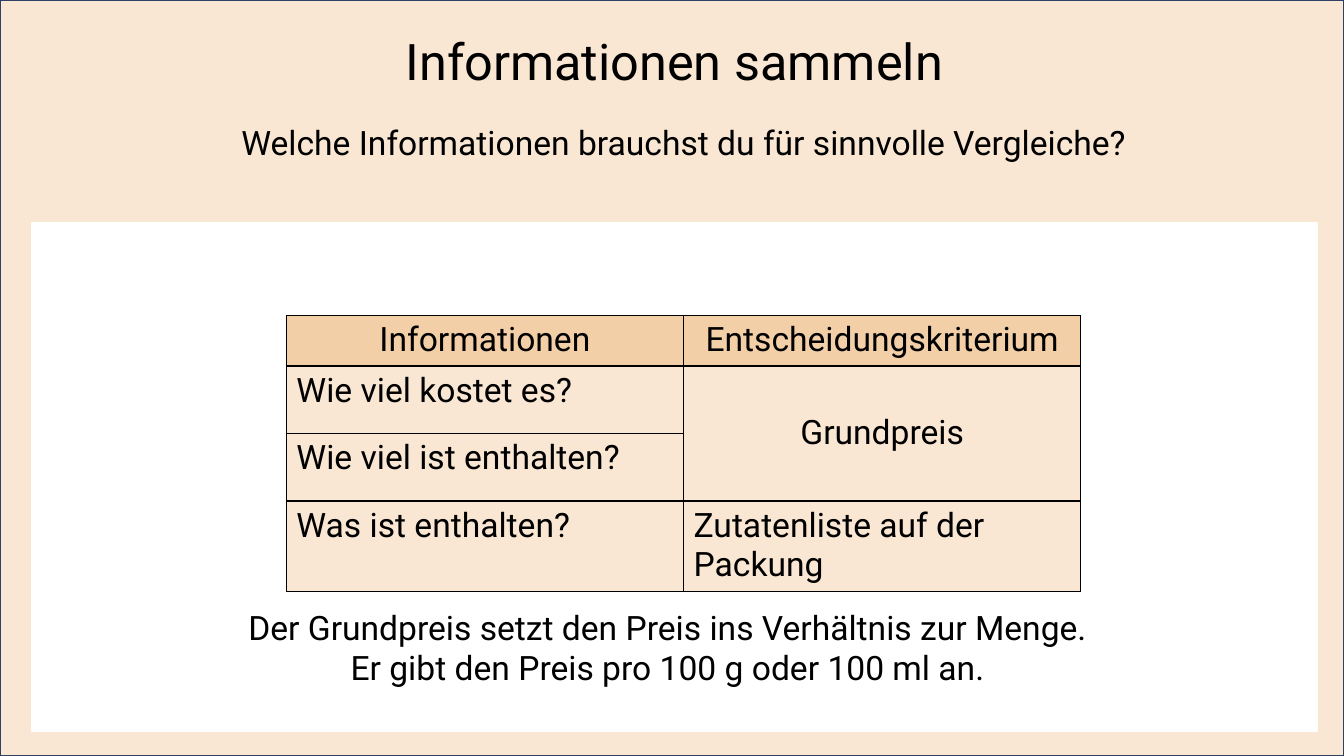
from lxml import etree
from pptx import Presentation
from pptx.dml.color import RGBColor
from pptx.enum.shapes import MSO_SHAPE as SHAPE
from pptx.enum.text import MSO_ANCHOR as ANCHOR, PP_ALIGN as ALIGN
from pptx.oxml.ns import qn
from pptx.util import Inches, Pt

COLORS = {
    "text": "000000",
    "cream": "F9E7D3",
    "header": "F2CFA7",
    "panel": "FFFFFF",
    "frame": "303F65",
}


class SlideBuilder:
    font = "Roboto"

    def __init__(self, slide):
        self.slide = slide

    def color(self, name):
        return RGBColor.from_string(COLORS[name])

    def style(self, p, size, align):
        p.alignment = align
        p.font.name = self.font
        p.font.size = Pt(size)
        p.font.color.rgb = self.color("text")

    def rect(self, x, y, w, h, fill, line):
        s = self.slide.shapes.add_shape(
            SHAPE.RECTANGLE, Inches(x), Inches(y), Inches(w), Inches(h))
        s.shadow.inherit = False
        s.fill.solid()
        s.fill.fore_color.rgb = self.color(fill)
        s.line.color.rgb = self.color(line)
        s.line.width = Pt(1.25)

    def text(self, x, y, w, h, lines, size=24):
        s = self.slide.shapes.add_textbox(Inches(x), Inches(y), Inches(w), Inches(h))
        tf = s.text_frame
        tf.word_wrap = True
        tf.text = "\n".join(lines)
        for p in tf.paragraphs:
            self.style(p, size, ALIGN.CENTER)

    def borders(self, cell):
        tcPr = cell._tc.get_or_add_tcPr()
        for i, side in enumerate(("lnL", "lnR", "lnT", "lnB")):
            ln = etree.Element(qn(f"a:{side}"), w=str(Pt(1)))
            fill = etree.SubElement(ln, qn("a:solidFill"))
            etree.SubElement(fill, qn("a:srgbClr"), val=COLORS["text"])
            tcPr.insert(i, ln)

    def table(self, x, y, col_w, row_heights, rows, merge):
        n_cols = len(rows[0])
        frame = self.slide.shapes.add_table(
            len(rows), n_cols, Inches(x), Inches(y),
            Inches(col_w * n_cols), Inches(sum(row_heights)))
        table = frame.table
        for col in table.columns:
            col.width = Inches(col_w)
        for row, height in zip(table.rows, row_heights):
            row.height = Inches(height)
        first, last = (table.cell(*pos) for pos in merge)
        first.merge(last)
        first.vertical_anchor = ANCHOR.MIDDLE
        for r, row in enumerate(rows):
            for c, content in enumerate(row):
                cell = table.cell(r, c)
                cell.fill.solid()
                cell.fill.fore_color.rgb = self.color("cream" if r else "header")
                self.borders(cell)
                cell.text = content
                p = cell.text_frame.paragraphs[0]
                centered = r == 0 or cell.is_merge_origin
                self.style(p, 24, ALIGN.CENTER if centered else ALIGN.LEFT)
                p.font.bold = False


def main():
    prs = Presentation()
    prs.slide_width, prs.slide_height = Inches(13.33), Inches(7.5)
    b = SlideBuilder(prs.slides.add_slide(prs.slide_layouts[6]))

    # Background and content panel
    b.rect(0, 0, 13.33, 7.5, "cream", "frame")
    b.rect(0.32, 2.21, 12.74, 5.04, "panel", "panel")

    # Title and question
    b.text(0.32, 0.25, 12.74, 0.71, ["Informationen sammeln"], size=36)
    b.text(0.32, 1.16, 12.92, 0.5,
           ["Welche Informationen brauchst du für sinnvolle Vergleiche?"])

    # Criteria table
    b.table(2.84, 3.13, 3.94, [0.5, 0.67, 0.67, 0.9], [
        ["Informationen", "Entscheidungskriterium"],
        ["Wie viel kostet es?", "Grundpreis"],
        ["Wie viel ist enthalten?", ""],
        ["Was ist enthalten?", "Zutatenliste auf der Packung"],
    ], merge=[(1, 1), (2, 1)])

    # Conclusion
    b.text(1.92, 5.97, 9.4, 0.91, [
        "Der Grundpreis setzt den Preis ins Verhältnis zur Menge.",
        "Er gibt den Preis pro 100 g oder 100 ml an.",
    ])

    prs.save("out.pptx")


if __name__ == "__main__":
    main()
